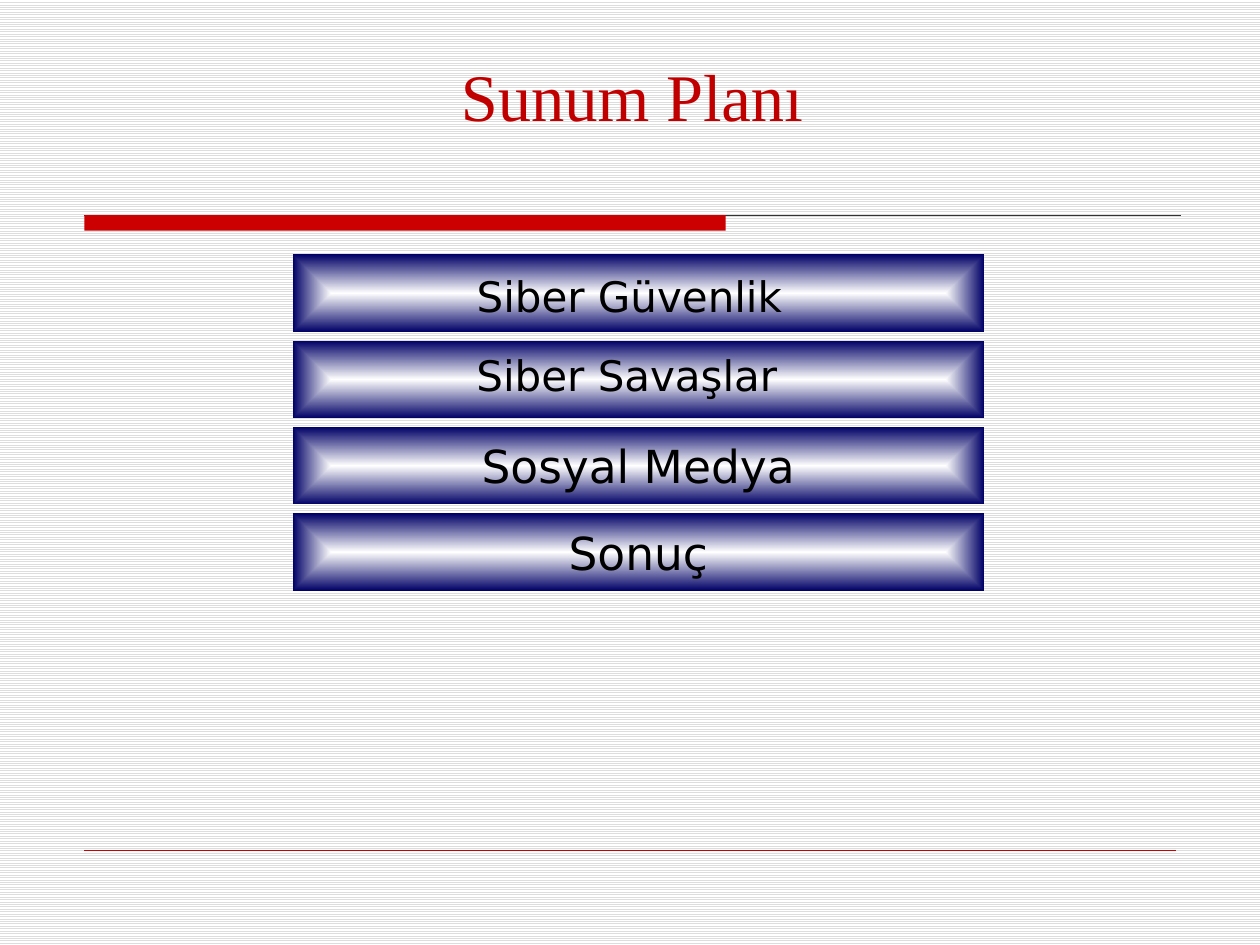
from lxml import etree
from pptx import Presentation, util as u
from pptx.dml.color import RGBColor
from pptx.enum import dml, shapes, text
from pptx.oxml import parse_xml
from pptx.oxml.ns import nsdecls, qn


def color(value):
    return RGBColor.from_string(value)


def style(span, size, font, value):
    span.font.size = u.Pt(size)
    span.font.name = font
    span.font.color.rgb = color(value)


deck = Presentation()
deck.slide_width, deck.slide_height = u.Cm(25.4), u.Cm(19.05)
page = deck.slides.add_slide(deck.slide_layouts[6])

background = page.background.fill
background.patterned()
background.pattern = dml.MSO_PATTERN.LIGHT_HORIZONTAL
background.fore_color.rgb = color("DDDDDD")
background.back_color.rgb = color("FFFFFF")

# Rules under the title and above the footer
for y, right, value, width in [(4.34, 23.8, "333333", 0.75), (17.14, 23.7, "CC0000", 0.25)]:
    rule = page.shapes.add_connector(
        shapes.MSO_CONNECTOR.STRAIGHT, u.Cm(1.7), u.Cm(y), u.Cm(right), u.Cm(y))
    rule.line.color.rgb = color(value)
    rule.line.width = u.Pt(width)
    etree.SubElement(rule._element.spPr, qn("a:effectLst"))

accent = page.shapes.add_shape(
    shapes.MSO_SHAPE.RECTANGLE, u.Cm(1.7), u.Cm(4.34), u.Cm(12.93), u.Cm(0.31))
accent.shadow.inherit = False
accent.fill.solid()
accent.fill.fore_color.rgb = color("CC0000")
accent.line.fill.background()

# The leading tab shifts the centred title to the right
title = page.shapes.add_textbox(u.Cm(5.36), u.Cm(0.99), u.Cm(13.49), u.Cm(2.64))
title.text_frame.word_wrap = True
para = title.text_frame.paragraphs[0]
para.alignment = text.PP_ALIGN.CENTER
for words, font, value in [("\t", "DejaVu Sans", "000000"),
                           ("Sunum Planı", "Times New Roman", "C00000")]:
    span = para.add_run()
    span.text = words
    style(span, 38, font, value)

# Agenda buttons; the first two carry their label in a separate box
for row, label in enumerate(["", "", "Sosyal Medya", "Sonuç"]):
    button = page.shapes.add_shape(
        shapes.MSO_SHAPE.ACTION_BUTTON_CUSTOM,
        u.Cm(5.9), u.Cm(5.13 + 1.74 * row), u.Cm(13.94), u.Cm(1.56))
    button.shadow.inherit = False
    button.line.fill.background()
    button.fill.gradient()
    for stop, position, value in zip(button.fill.gradient_stops, (0, 1), ("FFFFFF", "000066")):
        stop.position = position
        stop.color.rgb = color(value)
    gradient = button._element.spPr.find(qn("a:gradFill"))
    gradient.replace(gradient.find(qn("a:lin")), parse_xml(
        f'<a:path {nsdecls("a")} path="rect">'
        '<a:fillToRect l="50000" t="50000" r="50000" b="50000"/></a:path>'))
    if label:
        frame = button.text_frame
        frame.text = label
        frame.word_wrap = False
        frame.vertical_anchor = text.MSO_ANCHOR.MIDDLE
        frame.paragraphs[0].alignment = text.PP_ALIGN.CENTER
        style(frame.paragraphs[0].runs[0], 26, "DejaVu Sans", "000000")

for label, top, width in [("Siber Güvenlik", 5.33, 6.78), ("Siber Savaşlar", 6.93, 6.68)]:
    box = page.shapes.add_textbox(u.Cm(9.3), u.Cm(top), u.Cm(width), u.Cm(1.27))
    frame = box.text_frame
    frame.text = label
    frame.word_wrap = False
    frame.auto_size = text.MSO_AUTO_SIZE.SHAPE_TO_FIT_TEXT
    frame.paragraphs[0].alignment = text.PP_ALIGN.CENTER
    style(frame.paragraphs[0].runs[0], 24, "DejaVu Sans", "000000")

deck.save("out.pptx")
